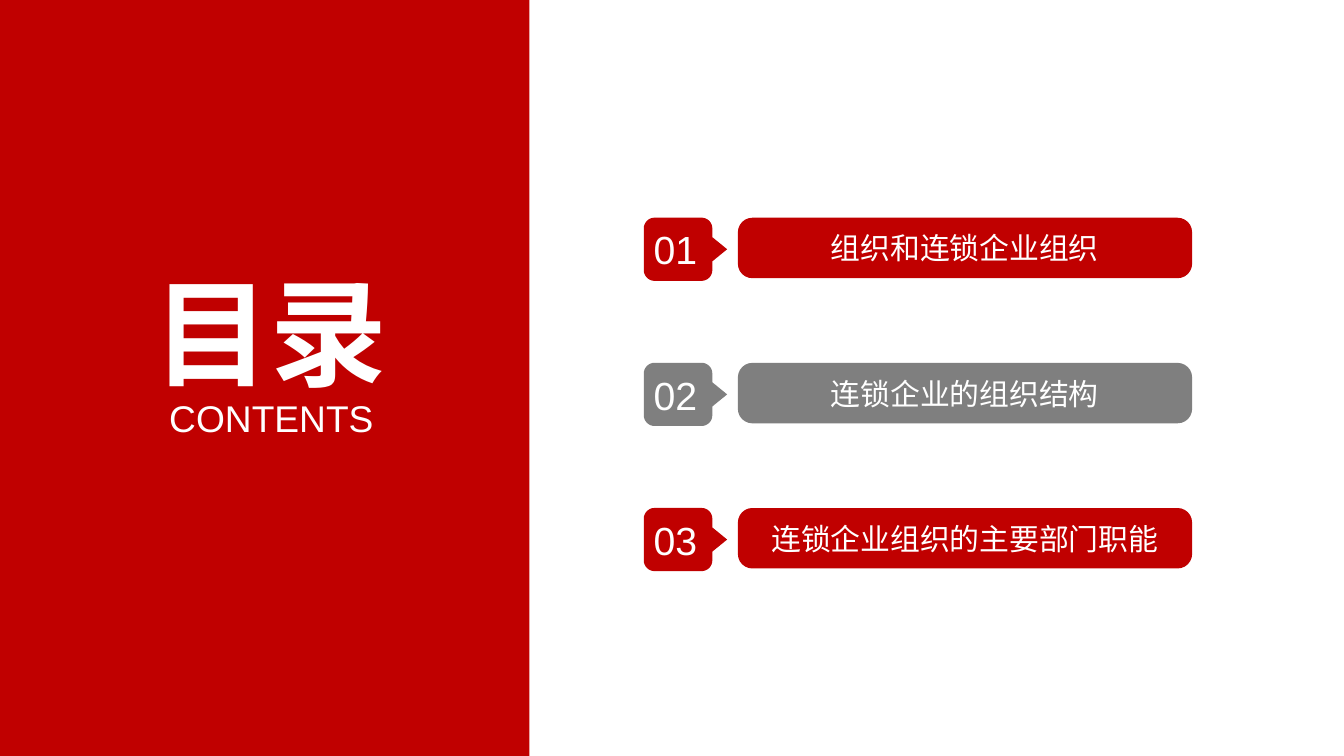
import math
from typing import NamedTuple

from pptx import Presentation
from pptx import util as u
from pptx.dml.color import RGBColor
from pptx.enum import shapes, text

COLORS = {"red": "C00000", "gray": "7F7F7F", "white": "FFFFFF"}
FONT = "Arial"

TAG_LEFT, TAG_TOP = 4.79, 1.62
TAG_WIDTH, TAG_HEIGHT, TAG_RADIUS = 0.51, 0.47, 0.08
POINTER_LENGTH, POINTER_HALF = 0.11, 0.09
BAR_LEFT, BAR_TOP, BAR_WIDTH, BAR_HEIGHT = 5.49, 1.62, 3.38, 0.45
PITCH = 1.08
ARC_STEPS = 8


class Chapter(NamedTuple):
    number: str
    heading: str
    color: str


CHAPTERS = [
    Chapter("01", "组织和连锁企业组织", "red"),
    Chapter("02", "连锁企业的组织结构", "gray"),
    Chapter("03", "连锁企业组织的主要部门职能", "red"),
]


def paint(shape, color: str) -> None:
    shape.shadow.inherit = False
    shape.fill.solid()
    shape.fill.fore_color.rgb = RGBColor.from_string(COLORS[color])
    shape.line.fill.background()


def write(shape, words: str, size: float, bold: bool = False,
          anchor=text.MSO_ANCHOR.MIDDLE,
          insets: tuple[float, float, float, float] = (0, 0, 0, 0)) -> None:
    """Put one centred white line in a shape; insets run left, top, right, bottom."""
    frame = shape.text_frame
    frame.word_wrap = True
    frame.auto_size = text.MSO_AUTO_SIZE.NONE
    frame.vertical_anchor = anchor
    (frame.margin_left, frame.margin_top,
     frame.margin_right, frame.margin_bottom) = map(u.Inches, insets)
    line = frame.paragraphs[0]
    line.text = words
    line.alignment = text.PP_ALIGN.CENTER
    line.font.name = FONT
    line.font.size = u.Pt(size)
    line.font.bold = bold
    line.font.color.rgb = RGBColor.from_string(COLORS["white"])


def tag_outline(top: float) -> list[tuple[int, int]]:
    """Rounded box with a pointer on its right side, clockwise from the pointer."""
    right, middle = TAG_LEFT + TAG_WIDTH, top + TAG_HEIGHT / 2
    near_x, far_x = TAG_LEFT + TAG_RADIUS, right - TAG_RADIUS
    near_y, far_y = top + TAG_RADIUS, top + TAG_HEIGHT - TAG_RADIUS
    points = [(right, middle - POINTER_HALF),
              (right + POINTER_LENGTH, middle),
              (right, middle + POINTER_HALF)]
    centers = [(far_x, far_y), (near_x, far_y), (near_x, near_y), (far_x, near_y)]
    for quarter, (x, y) in enumerate(centers):
        for step in range(ARC_STEPS + 1):
            angle = math.pi / 2 * (quarter + step / ARC_STEPS)
            points.append((x + TAG_RADIUS * math.cos(angle),
                           y + TAG_RADIUS * math.sin(angle)))
    return [(u.Inches(x), u.Inches(y)) for x, y in points]


def draw_chapter(slide, chapter: Chapter, offset: float) -> None:
    bar = slide.shapes.add_shape(
        shapes.MSO_SHAPE.ROUNDED_RECTANGLE, u.Inches(BAR_LEFT),
        u.Inches(BAR_TOP + offset), u.Inches(BAR_WIDTH), u.Inches(BAR_HEIGHT))
    bar.adjustments[0] = 0.24
    paint(bar, chapter.color)
    write(bar, chapter.heading, 16)

    start, *rest = tag_outline(TAG_TOP + offset)
    builder = slide.shapes.build_freeform(*start)
    builder.add_line_segments(rest, close=True)
    tag = builder.convert_to_shape()
    paint(tag, chapter.color)
    write(tag, chapter.number, 21, insets=(0, 0.04, 0.15, 0.04))


def main() -> None:
    prs = Presentation()
    prs.slide_width = u.Inches(10)
    prs.slide_height = prs.slide_width * 9 // 16
    slide = prs.slides.add_slide(prs.slide_layouts.get_by_name("Title Only"))

    title = slide.shapes.title
    title.left, title.top = u.Inches(1.13), u.Inches(1.94)
    title.width, title.height = u.Inches(1.77), u.Inches(1.05)
    write(title, "目录", 62.6, bold=True, anchor=text.MSO_ANCHOR.TOP)

    panel = slide.shapes.add_shape(
        shapes.MSO_SHAPE.RECTANGLE, 0, 0, u.Inches(3.94), prs.slide_height)
    paint(panel, "red")
    title.element.addprevious(panel.element)  # the panel lies behind the title

    subtitle = slide.shapes.add_textbox(
        u.Inches(1.09), u.Inches(2.94), u.Inches(1.86), u.Inches(0.34))
    write(subtitle, "CONTENTS", 19.9, anchor=text.MSO_ANCHOR.TOP)

    for index, chapter in enumerate(CHAPTERS):
        draw_chapter(slide, chapter, index * PITCH)

    prs.save("out.pptx")


if __name__ == "__main__":
    main()
